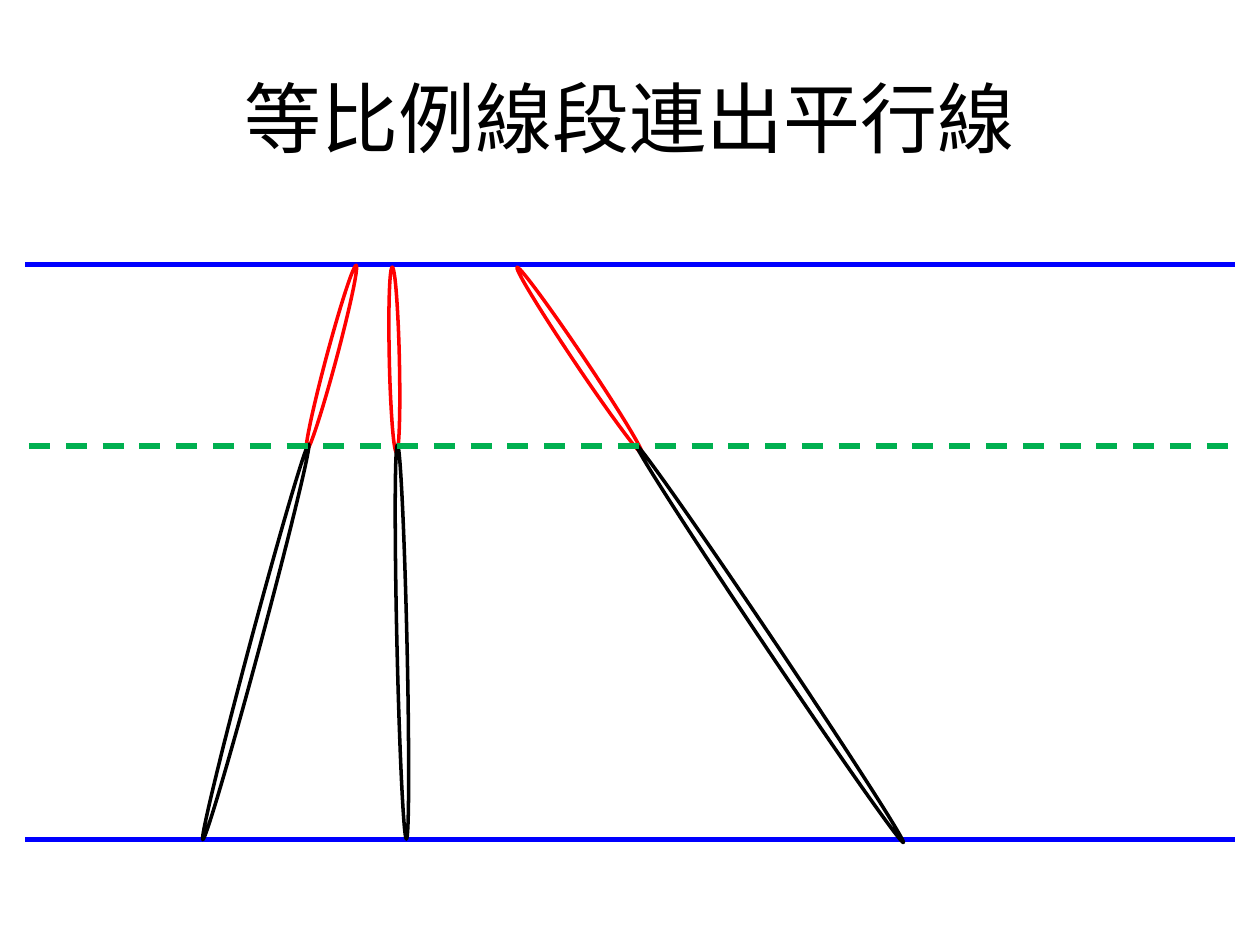
from lxml.etree import SubElement
from pptx import Presentation
from pptx.dml.color import RGBColor
from pptx.enum.dml import MSO_LINE as Dash
from pptx.enum.shapes import MSO_CONNECTOR as Connector, MSO_SHAPE as Shape
from pptx.enum.text import MSO_ANCHOR as Anchor, PP_ALIGN as Align
from pptx.oxml.ns import qn
from pptx.util import Pt

BLACK = RGBColor(0, 0, 0)
BLUE = RGBColor(0, 0, 255)
RED = RGBColor(255, 0, 0)
GREEN = RGBColor(0, 176, 80)
FONT = "Noto Sans CJK SC"

deck = Presentation()
deck.slide_width, deck.slide_height = Pt(720), Pt(540)
page = deck.slides.add_slide(deck.slide_layouts[6])


def add_line(left, top, color):
    line = page.shapes.add_connector(
        Connector.STRAIGHT, Pt(left), Pt(top), Pt(left + 691.2), Pt(top))
    line.line.color.rgb = color
    line.line.width = Pt(3)
    SubElement(line._element.spPr, qn("a:effectLst"))
    return line


# Title
box = page.shapes.add_textbox(Pt(36), Pt(21.6), Pt(648), Pt(90))
frame = box.text_frame
frame.word_wrap = True
frame.vertical_anchor = Anchor.MIDDLE
para = frame.paragraphs[0]
para.alignment = Align.CENTER
span = para.add_run()
span.text = "等比例線段連出平行線"
span.font.size = Pt(44)
span.font.name = FONT
span.font.color.rgb = BLACK
SubElement(span._r.rPr, qn("a:ea"), typeface=FONT)

# Outer parallel lines
for top in (151.2, 479.52):
    add_line(14.4, top, BLUE)

# Transversals: rotation, then left, top, height of the upper and lower segment
transversals = [
    (15, (186.48, 149.76, 109.44), (143.28, 249.84, 234)),
    (358.7, (222.48, 152.64, 105.84), (226.8, 254.16, 225.36)),
    (326.1, (328.32, 141.84, 128.16), (437.04, 231.12, 273.6)),
]
for rotation, *segments in transversals:
    for color, (left, top, height) in zip((RED, BLACK), segments):
        segment = page.shapes.add_shape(
            Shape.OVAL, Pt(left), Pt(top), Pt(5.76), Pt(height))
        segment.rotation = rotation
        segment.shadow.inherit = False
        segment.fill.background()
        segment.line.color.rgb = color
        segment.line.width = Pt(2)

# Dashed parallel through the dividing points
add_line(16.56, 254.88, GREEN).line.dash_style = Dash.DASH

deck.save("out.pptx")
